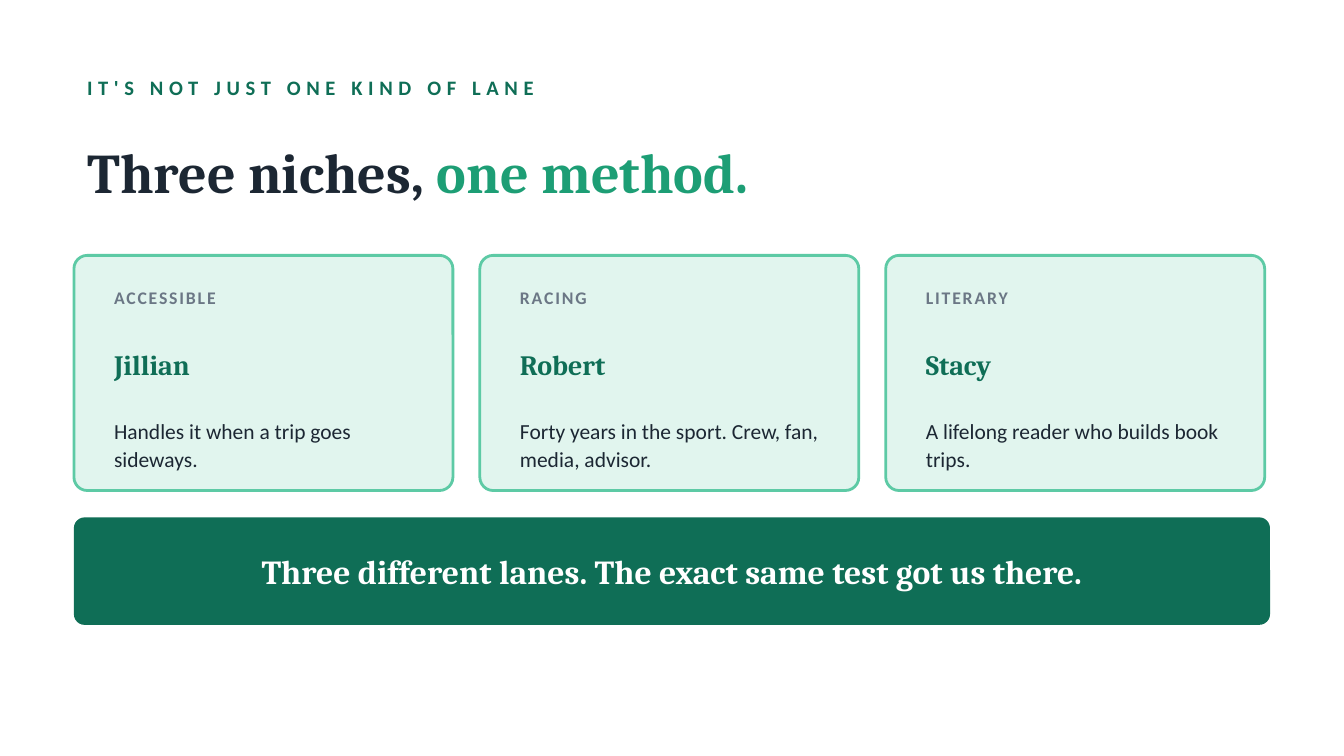
import pptx
import pptx.dml.color
import pptx.enum.shapes
import pptx.enum.text
import pptx.util
from dataclasses import dataclass

Pt = pptx.util.Pt
ALIGN = pptx.enum.text.PP_ALIGN

EYEBROW = "IT'S NOT JUST ONE KIND OF LANE"
TITLE = [("Three niches, ", "ink"), ("one method.", "accent")]
NICHES = [
    ("ACCESSIBLE", "Jillian", "Handles it when a trip goes sideways."),
    ("RACING", "Robert", "Forty years in the sport. Crew, fan, media, advisor."),
    ("LITERARY", "Stacy", "A lifelong reader who builds book trips."),
]
BANNER = "Three different lanes. The exact same test got us there."


@dataclass(frozen=True)
class Style:
    font: str
    size: float
    color: str
    bold: bool = True
    tracking: float = 0
    line_spacing: float = 1.0


class Theme:
    colors = {
        "ink": "1C2733",
        "accent": "1D9E75",
        "deep": "0F6E56",
        "muted": "6B7785",
        "card": "E1F5EE",
        "border": "5DCAA5",
        "white": "FFFFFF",
    }
    eyebrow = Style("Calibri", 11, "deep", tracking=3)
    title = Style("Cambria", 30, "ink")
    label = Style("Calibri", 9.5, "muted", tracking=1)
    name = Style("Cambria", 15, "deep")
    body = Style("Calibri", 11.5, "ink", bold=False, line_spacing=1.08)
    banner = Style("Cambria", 18, "white")


SLIDE_WIDTH, SLIDE_HEIGHT = 720, 405
MARGIN = 39.6
CONTENT_WIDTH = SLIDE_WIDTH - 2 * MARGIN
CARD_TOP, CARD_WIDTH, CARD_HEIGHT = 136.8, 203.04, 126
GAP = 14.4
CARD_PADDING = 14.4
CARD_TEXT_WIDTH = 176.4
CARD_ROWS = [
    (148.32, 21.6, Theme.label),
    (169.92, 50.4, Theme.name),
    (221.76, 32.4, Theme.body),
]
BANNER_TOP, BANNER_HEIGHT = CARD_TOP + CARD_HEIGHT + GAP, 57.6


def rgb(name):
    return pptx.dml.color.RGBColor.from_string(Theme.colors[name])


def place(shape, left, top, width, height):
    shape.left, shape.top = Pt(left), Pt(top)
    shape.width, shape.height = Pt(width), Pt(height)


def write(shape, runs, style, alignment=ALIGN.LEFT):
    frame = shape.text_frame
    frame.word_wrap = True
    frame.auto_size = pptx.enum.text.MSO_AUTO_SIZE.NONE
    frame.vertical_anchor = pptx.enum.text.MSO_ANCHOR.MIDDLE
    paragraph = frame.paragraphs[0]
    paragraph.alignment = alignment
    paragraph.line_spacing = style.line_spacing
    for text, color in runs:
        run = paragraph.add_run()
        run.text = text
        run.font.name = style.font
        run.font.size = Pt(style.size)
        run.font.bold = style.bold
        run.font.color.rgb = rgb(color)
        if style.tracking:
            run.font._element.set("spc", str(int(style.tracking * 100)))


def add_text(slide, box, text, style):
    shape = slide.shapes.add_textbox(*map(Pt, box))
    write(shape, [(text, style.color)], style)


def add_panel(slide, box, fill, corner, border=None):
    kind = pptx.enum.shapes.MSO_SHAPE.ROUNDED_RECTANGLE
    shape = slide.shapes.add_shape(kind, *map(Pt, box))
    shape.adjustments[0] = corner
    shape.shadow.inherit = False
    shape.fill.solid()
    shape.fill.fore_color.rgb = rgb(fill)
    if border:
        shape.line.color.rgb = rgb(border)
        shape.line.width = Pt(1.5)
    else:
        shape.line.fill.background()
    return shape


def main():
    presentation = pptx.Presentation()
    presentation.slide_width = Pt(SLIDE_WIDTH)
    presentation.slide_height = Pt(SLIDE_HEIGHT)
    slide = presentation.slides.add_slide(presentation.slide_layouts[5])

    add_text(slide, (MARGIN, 36, CONTENT_WIDTH, 21.6), EYEBROW, Theme.eyebrow)
    title = slide.shapes.title
    place(title, MARGIN, 61.2, CONTENT_WIDTH, 61.2)
    write(title, TITLE, Theme.title)

    for index, texts in enumerate(NICHES):
        left = MARGIN + index * (CARD_WIDTH + GAP)
        card_box = (left, CARD_TOP, CARD_WIDTH, CARD_HEIGHT)
        add_panel(slide, card_box, "card", 0.057, "border")
        for text, (top, height, style) in zip(texts, CARD_ROWS):
            row_box = (left + CARD_PADDING, top, CARD_TEXT_WIDTH, height)
            add_text(slide, row_box, text, style)

    banner_box = (MARGIN, BANNER_TOP, CONTENT_WIDTH, BANNER_HEIGHT)
    banner = add_panel(slide, banner_box, "deep", 0.1)
    write(banner, [(BANNER, Theme.banner.color)], Theme.banner, ALIGN.CENTER)

    presentation.save("out.pptx")


if __name__ == "__main__":
    main()
